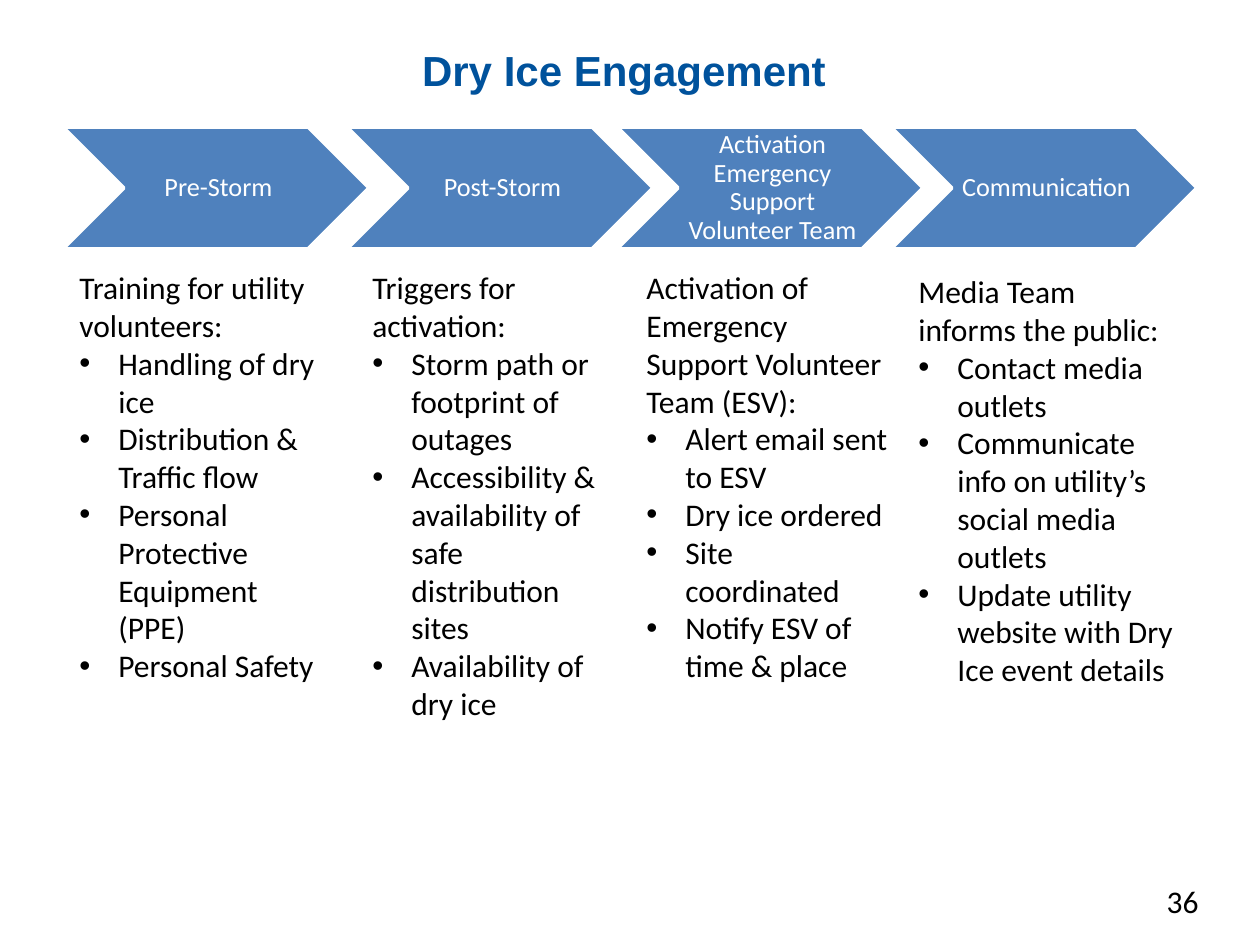
"""Build the Dry Ice Engagement process slide."""
import pptx
import pptx.dml.color
import pptx.enum.shapes
import pptx.enum.text
import pptx.oxml.ns
import pptx.util
from lxml import etree

ALIGN = pptx.enum.text.PP_ALIGN
ANCHOR = pptx.enum.text.MSO_ANCHOR
STAGES = [
    {"name": "Pre-Storm", "chevron_left": 63, "box": (67, 262, 276, 432),
     "intro": "Training for utility volunteers:",
     "points": ["Handling of dry ice", "Distribution & Traffic flow",
                "Personal Protective Equipment (PPE)", "Personal Safety"]},
    {"name": "Post-Storm", "chevron_left": 347, "box": (360, 262, 262, 471),
     "intro": "Triggers for activation:",
     "points": ["Storm path or footprint of outages",
                "Accessibility & availability of safe distribution sites",
                "Availability of dry ice"]},
    {"name": "Activation Emergency Support Volunteer Team",
     "chevron_left": 617, "box": (634, 262, 272, 432),
     "intro": "Activation of Emergency Support Volunteer Team (ESV):",
     "points": ["Alert email sent to ESV", "Dry ice ordered",
                "Site coordinated", "Notify ESV of time & place"]},
    {"name": "Communication", "chevron_left": 891, "box": (906, 266, 281, 471),
     "intro": "Media Team informs the public:",
     "points": ["Contact media outlets",
                "Communicate info on utility’s social media outlets",
                "Update utility website with Dry Ice event details"]},
]
CHEVRON_TOP, CHEVRON_WIDTH, CHEVRON_HEIGHT = 127, 306, 122
LABEL_OFFSET, LABEL_WIDTH = 61, 184
BULLET_INDENT = 39


def px(length):
    return pptx.util.Emu(round(length * 914400 / 126))


def color(value):
    return pptx.dml.color.RGBColor.from_string(value)


def add_bullet(paragraph):
    properties = paragraph._p.get_or_add_pPr()
    properties.set("marL", str(px(BULLET_INDENT)))
    properties.set("indent", str(-px(BULLET_INDENT)))
    for tag, name, value in (("a:buFont", "typeface", "Arial"), ("a:buChar", "char", "•")):
        etree.SubElement(properties, pptx.oxml.ns.qn(tag)).set(name, value)


def add_text(slide, box, text, points=(), size=18, font="Calibri", fill="000000",
             bold=False, align=ALIGN.LEFT, anchor=ANCHOR.TOP, spacing=None, margins=None):
    frame = slide.shapes.add_textbox(*map(px, box)).text_frame
    frame.word_wrap = True
    frame.vertical_anchor = anchor
    if margins:
        (frame.margin_left, frame.margin_top,
         frame.margin_right, frame.margin_bottom) = map(px, margins)
    for index, line in enumerate([text, *points]):
        paragraph = frame.add_paragraph() if index else frame.paragraphs[0]
        paragraph.text = line
        paragraph.alignment = align
        if spacing:
            paragraph.line_spacing = spacing
        if index:
            add_bullet(paragraph)
        run_font = paragraph.runs[0].font
        run_font.name, run_font.size, run_font.bold = font, pptx.util.Pt(size), bold
        run_font.color.rgb = color(fill)


def add_chevron(slide, left):
    shape = slide.shapes.add_shape(
        pptx.enum.shapes.MSO_SHAPE.CHEVRON,
        *map(px, (left, CHEVRON_TOP, CHEVRON_WIDTH, CHEVRON_HEIGHT)))
    shape.shadow.inherit = False
    shape.fill.solid()
    shape.fill.fore_color.rgb = color("4F81BD")
    shape.line.color.rgb = color("FFFFFF")
    shape.line.width = pptx.util.Pt(2)


def main():
    presentation = pptx.Presentation()
    presentation.slide_width, presentation.slide_height = px(1260), px(945)
    slide = presentation.slides.add_slide(presentation.slide_layouts[6])
    add_text(slide, (57, 38, 1134, 158), "Dry Ice Engagement", size=24, font="Arial",
             fill="00529C", bold=True, align=ALIGN.CENTER)
    for stage in STAGES:
        left = stage["chevron_left"]
        add_chevron(slide, left)
        add_text(slide, (left + LABEL_OFFSET, CHEVRON_TOP, LABEL_WIDTH, CHEVRON_HEIGHT),
                 stage["name"], size=15, fill="FFFFFF", align=ALIGN.CENTER,
                 anchor=ANCHOR.MIDDLE, spacing=0.9, margins=(8, 3, 3, 3))
        add_text(slide, stage["box"], stage["intro"], stage["points"])
    add_text(slide, (917, 876, 294, 50), "36", align=ALIGN.RIGHT, anchor=ANCHOR.MIDDLE)
    presentation.save("out.pptx")


if __name__ == "__main__":
    main()
